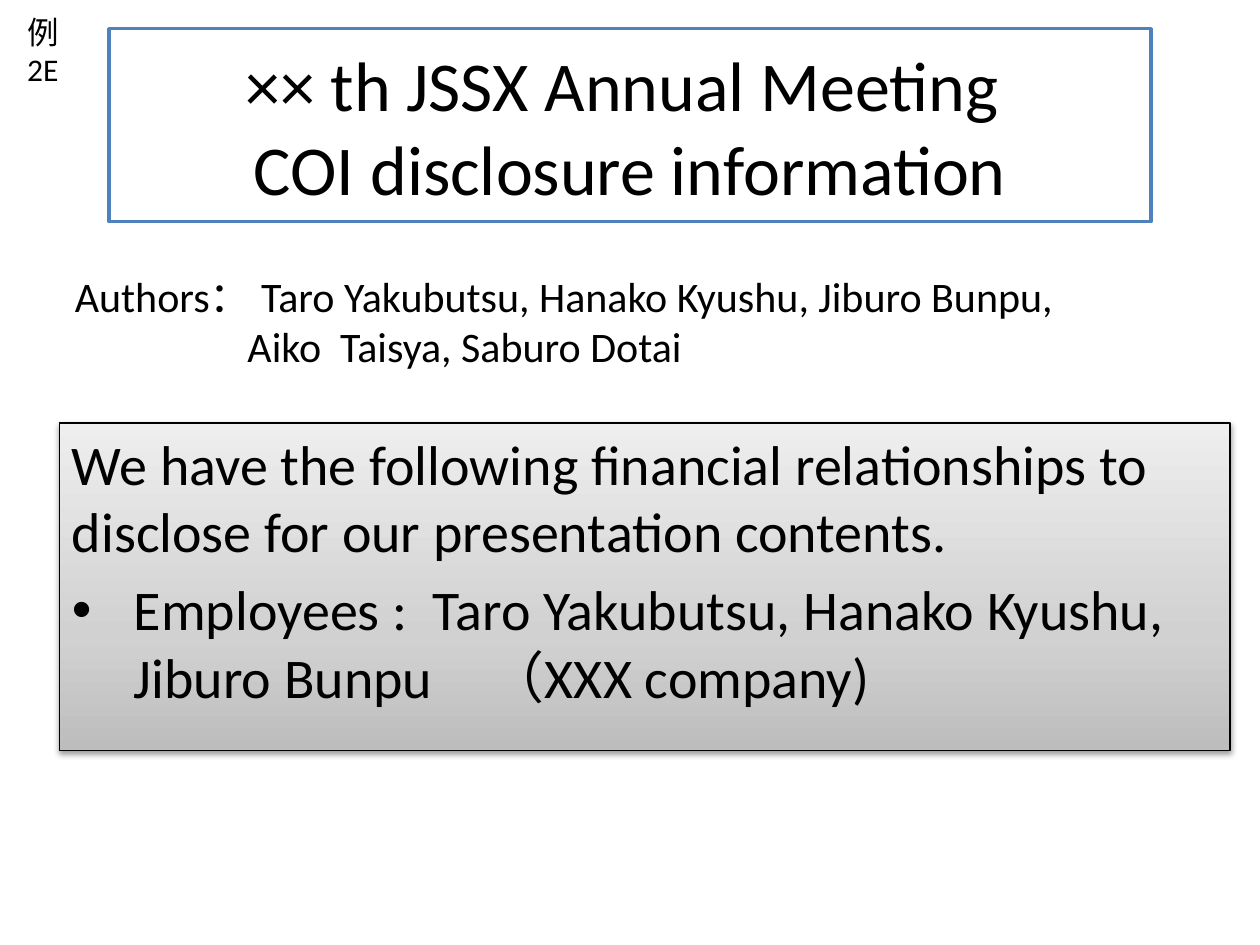
from lxml import etree
from pptx import Presentation
from pptx.dml.color import RGBColor
from pptx.enum.shapes import MSO_SHAPE
from pptx.enum.text import MSO_ANCHOR, PP_ALIGN
from pptx.oxml.ns import qn
from pptx.util import Cm, Pt

RECTANGLE = MSO_SHAPE.RECTANGLE
TOP, MIDDLE = MSO_ANCHOR.TOP, MSO_ANCHOR.MIDDLE
LEFT, CENTER = PP_ALIGN.LEFT, PP_ALIGN.CENTER
FONT = "Calibri"
BLACK, WHITE, BLUE = "000000", "FFFFFF", "4F81BD"
PANEL_STOPS = [(0, "BDBDBD"), (35, "D1D1D1"), (100, "EEEEEE")]


def color(hex_value):
    return RGBColor.from_string(hex_value)


def add_child(parent, tag, **attributes):
    return etree.SubElement(parent, qn(tag), attributes)


def add_rectangle(page, left, top, width, height, line, line_width, anchor):
    box = page.shapes.add_shape(RECTANGLE, Cm(left), Cm(top), Cm(width), Cm(height))
    box.shadow.inherit = False
    box.line.color.rgb = color(line)
    box.line.width = Pt(line_width)
    box.text_frame.word_wrap = True
    box.text_frame.vertical_anchor = anchor
    return box


def add_text_box(page, left, top, width, height):
    box = page.shapes.add_textbox(Cm(left), Cm(top), Cm(width), Cm(height))
    box.text_frame.word_wrap = True
    return box


def fill_gradient(box, stops, angle):
    box.fill.gradient()
    box.fill.gradient_angle = angle
    stop_list = box._element.spPr.find(".//" + qn("a:gsLst"))
    for old_stop in list(stop_list):
        stop_list.remove(old_stop)
    for position, hex_value in stops:
        stop = add_child(stop_list, "a:gs", pos=str(position * 1000))
        add_child(stop, "a:srgbClr", val=hex_value)


def add_drop_shadow(box, blur, distance, opacity):
    effects = box._element.spPr.find(qn("a:effectLst"))
    shadow = add_child(effects, "a:outerShdw", blurRad=str(Pt(blur)),
                       dist=str(Pt(distance)), dir="5400000", rotWithShape="0")
    shade = add_child(shadow, "a:srgbClr", val=BLACK)
    add_child(shade, "a:alpha", val=str(opacity * 1000))


def write_paragraphs(box, texts, size, align=LEFT, space_before=0):
    frame = box.text_frame
    for index, text in enumerate(texts):
        para = frame.add_paragraph() if index else frame.paragraphs[0]
        para.alignment = align
        para.space_before = Pt(space_before)
        span = para.add_run()
        span.text = text
        span.font.name = FONT
        span.font.size = Pt(size)
        span.font.color.rgb = color(BLACK)
    return frame.paragraphs


def hang(para, indent, bullet=None):
    properties = para._p.get_or_add_pPr()
    properties.set("marL", str(Cm(indent)))
    properties.set("indent", str(-Cm(indent)))
    if bullet:
        add_child(properties, "a:buFont", typeface="Arial")
        add_child(properties, "a:buChar", char=bullet)


def main():
    deck = Presentation()
    deck.slide_width, deck.slide_height = Cm(25.4), Cm(19.05)
    page = deck.slides.add_slide(deck.slide_layouts[6])

    # Disclosure panel
    panel = add_rectangle(page, 1.2, 8.53, 23.6, 6.6, BLACK, 0.75, TOP)
    fill_gradient(panel, PANEL_STOPS, 90)
    add_drop_shadow(panel, 3.1, 1.6, 38)
    statements = write_paragraphs(panel, [
        "We have the following financial relationships to disclose for our "
        "presentation contents.",
        "Employees :  Taro Yakubutsu, Hanako Kyushu, Jiburo Bunpu　（XXX company)",
    ], 32, space_before=6.4)
    hang(statements[1], 1.25, "•")

    # Authors
    authors = add_text_box(page, 1.26, 5.33, 20.83, 2.31)
    names = write_paragraphs(authors, [
        "Authors： Taro Yakubutsu, Hanako Kyushu, Jiburo Bunpu, "
        "Aiko  Taisya, Saburo Dotai",
    ], 24)
    hang(names[0], 3.48)

    # Example label
    label = add_text_box(page, 0.3, 0.13, 1.75, 1.02)
    write_paragraphs(label, ["例2E"], 18)

    # Title
    title = add_rectangle(page, 2.2, 0.58, 21, 3.89, BLUE, 2, MIDDLE)
    title.fill.solid()
    title.fill.fore_color.rgb = color(WHITE)
    write_paragraphs(title, ["×× th JSSX Annual Meeting ",
                             "COI disclosure information"], 40, CENTER)

    deck.save("out.pptx")


if __name__ == "__main__":
    main()
